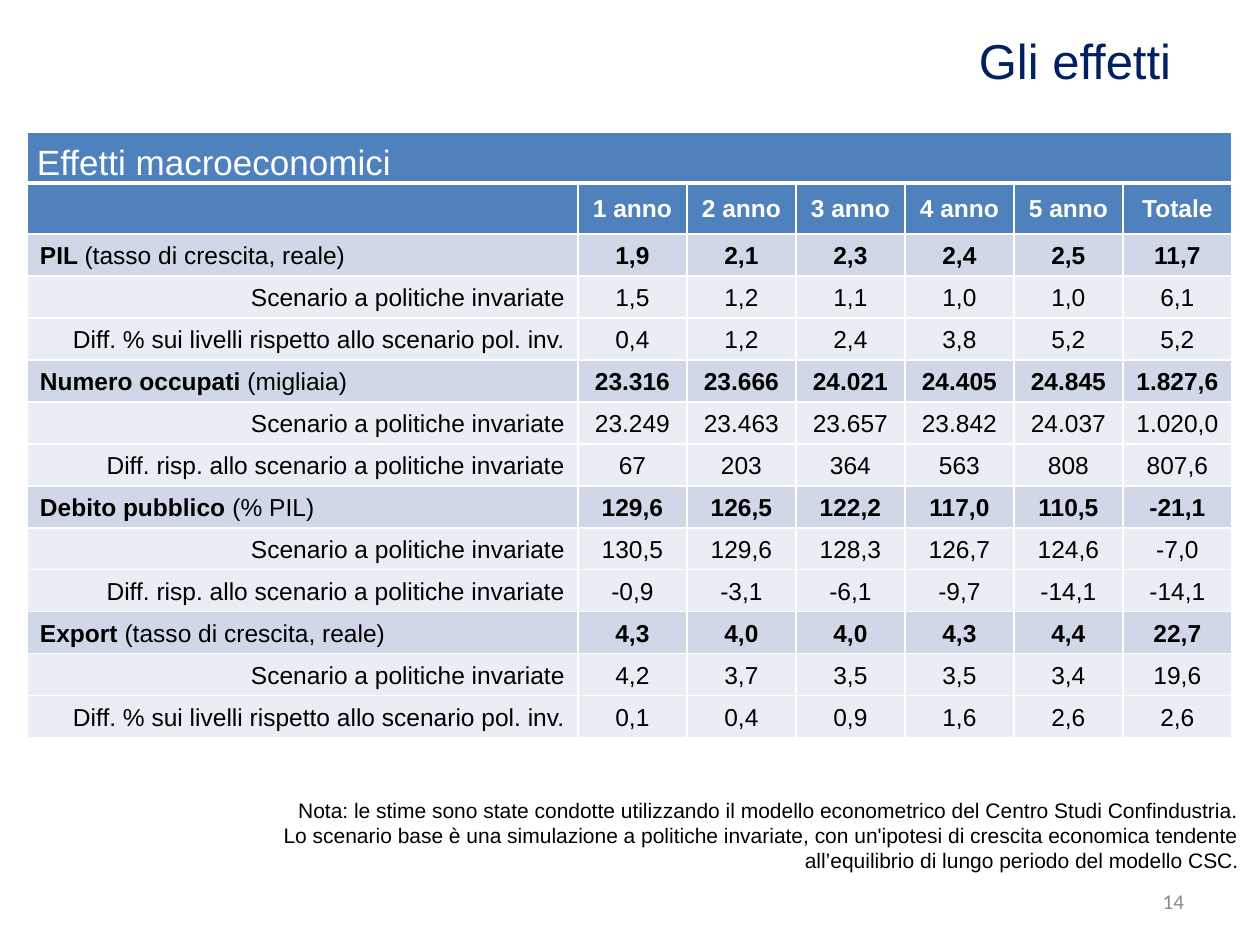
from dataclasses import dataclass
from lxml import etree
from pptx import Presentation
from pptx.dml.color import RGBColor
from pptx.enum.text import MSO_ANCHOR, MSO_AUTO_SIZE, PP_ALIGN
from pptx.oxml.ns import qn
from pptx.util import Pt

LEFT, CENTER, RIGHT = PP_ALIGN.LEFT, PP_ALIGN.CENTER, PP_ALIGN.RIGHT
TOP, MIDDLE, BOTTOM = MSO_ANCHOR.TOP, MSO_ANCHOR.MIDDLE, MSO_ANCHOR.BOTTOM
GROW, FIXED = MSO_AUTO_SIZE.SHAPE_TO_FIT_TEXT, MSO_AUTO_SIZE.NONE


@dataclass(frozen=True)
class Theme:
    font: str = "Arial"
    number_font: str = "Calibri"
    navy: str = "002060"
    gray: str = "898989"
    black: str = "000000"
    white: str = "FFFFFF"
    header: str = "4F81BD"
    band: str = "D0D8E8"
    light: str = "E9EDF4"
    title: int = 28
    caption: int = 20
    body: int = 14
    small: int = 12


YEARS = [f"{n} anno" for n in range(1, 6)] + ["Totale"]
BASE = "Scenario a politiche invariate"
DIFF_PCT = "Diff. % sui livelli rispetto allo scenario pol. inv."
DIFF = "Diff. risp. allo scenario a politiche invariate"
GROUPS = [
    ("PIL ", "(tasso di crescita, reale)", DIFF_PCT,
     "1,9 2,1 2,3 2,4 2,5 11,7",
     "1,5 1,2 1,1 1,0 1,0 6,1",
     "0,4 1,2 2,4 3,8 5,2 5,2"),
    ("Numero occupati ", "(migliaia)", DIFF,
     "23.316 23.666 24.021 24.405 24.845 1.827,6",
     "23.249 23.463 23.657 23.842 24.037 1.020,0",
     "67 203 364 563 808 807,6"),
    ("Debito pubblico ", "(% PIL)", DIFF,
     "129,6 126,5 122,2 117,0 110,5 -21,1",
     "130,5 129,6 128,3 126,7 124,6 -7,0",
     "-0,9 -3,1 -6,1 -9,7 -14,1 -14,1"),
    ("Export ", "(tasso di crescita, reale)", DIFF_PCT,
     "4,3 4,0 4,0 4,3 4,4 22,7",
     "4,2 3,7 3,5 3,5 3,4 19,6",
     "0,1 0,4 0,9 1,6 2,6 2,6"),
]
NOTE = [
    "Nota: le stime sono state condotte utilizzando il modello econometrico del Centro Studi Confindustria.",
    "Lo scenario base è una simulazione a politiche invariate, con un'ipotesi di crescita economica tendente",
    "all’equilibrio di lungo periodo del modello CSC.",
]


def px(n):
    """Turn pixels into EMU."""
    return round(n * 914400 / 126)


class Deck:
    """Hold the theme and the current slide."""

    def __init__(self, theme):
        """Open a presentation with one blank slide."""
        self.t = theme
        self.prs = Presentation()
        self.prs.slide_width, self.prs.slide_height = px(1260), px(945)
        self.s = self.prs.slides.add_slide(self.prs.slide_layouts[6])

    def run(self, p, text, size, color, bold=False, font=None):
        """Add one styled run."""
        r = p.add_run()
        r.text = text
        r.font.name = font or self.t.font
        r.font.size = Pt(size)
        r.font.bold = bold
        r.font.color.rgb = RGBColor.from_string(color)

    def text(self, box, lines, size, color, font=None, anchor=TOP, fit=GROW, inset=13):
        """Add a right-aligned text box with one paragraph a line."""
        tf = self.s.shapes.add_textbox(*map(px, box)).text_frame
        tf.word_wrap = True
        tf.auto_size = fit
        tf.vertical_anchor = anchor
        tf.margin_right = px(inset)
        for i, line in enumerate(lines):
            p = tf.add_paragraph() if i else tf.paragraphs[0]
            p.alignment = RIGHT
            self.run(p, line, size, color, font=font)

    def table(self, left, top, widths, heights):
        """Add a table with the given column widths and row heights."""
        sp = self.s.shapes.add_table(len(heights), len(widths), px(left), px(top),
                                     px(sum(widths)), px(sum(heights)))
        tbl = sp.table
        tbl.first_row = tbl.horz_banding = False
        for col, w in zip(tbl.columns, widths):
            col.width = px(w)
        for row, h in zip(tbl.rows, heights):
            row.height = px(h)
        return tbl

    def cell(self, cell, runs, fill, color, size, align=LEFT, anchor=BOTTOM,
             insets=(13, 6, 13, 6), bottom=1):
        """Fill one cell with (text, bold) runs, a colour and borders."""
        tc_pr = cell._tc.get_or_add_tcPr()
        for side, width in (("L", 1), ("R", 1), ("T", 1), ("B", bottom)):
            ln = etree.SubElement(tc_pr, qn(f"a:ln{side}"), w=str(Pt(width)))
            solid = etree.SubElement(ln, qn("a:solidFill"))
            etree.SubElement(solid, qn("a:srgbClr"), val=self.t.white)
        cell.fill.solid()
        cell.fill.fore_color.rgb = RGBColor.from_string(fill)
        cell.vertical_anchor = anchor
        (cell.margin_left, cell.margin_top,
         cell.margin_right, cell.margin_bottom) = map(px, insets)
        p = cell.text_frame.paragraphs[0]
        p.alignment = align
        for text, bold in runs:
            self.run(p, text, size, color, bold)

    def effects(self):
        """Build the table of macroeconomic effects."""
        t = self.t
        tbl = self.table(27, 132, [551] + [109] * 6, [51] * 2 + [42] * 12)
        tbl.cell(0, 0).merge(tbl.cell(0, 6))
        for c, head in enumerate([""] + YEARS):
            caption = [("Effetti macroeconomici", False)] if c == 0 else []
            self.cell(tbl.cell(0, c), caption, t.header, t.white, t.caption,
                      insets=(10, 0, 0, 0), bottom=3)
            self.cell(tbl.cell(1, c), [(head, True)] if head else [], t.header, t.white,
                      t.body, CENTER, MIDDLE, (1, 1, 1, 0))
        for g, (name, unit, diff, *series) in enumerate(GROUPS):
            labels = [[(name, True), (unit, False)], [(BASE, False)], [(diff, False)]]
            for i, (label, values) in enumerate(zip(labels, series)):
                row, main = 2 + 3 * g + i, i == 0
                fill = t.band if main else t.light
                self.cell(tbl.cell(row, 0), label, fill, t.black, t.body,
                          LEFT if main else RIGHT)
                for c, value in enumerate(values.split(), 1):
                    self.cell(tbl.cell(row, c), [(value, main)], fill, t.black,
                              t.body, CENTER)


def main():
    """Build and save the slide."""
    t = Theme()
    deck = Deck(t)
    deck.text((84, 24, 1100, 72), ["Gli effetti"], t.title, t.navy)
    deck.text((903, 876, 294, 50), ["14"], t.small, t.gray, t.number_font, MIDDLE, FIXED)
    deck.effects()
    deck.text((0, 791, 1259, 90), NOTE, t.small, t.black, inset=20)
    deck.prs.save("out.pptx")


if __name__ == "__main__":
    main()
